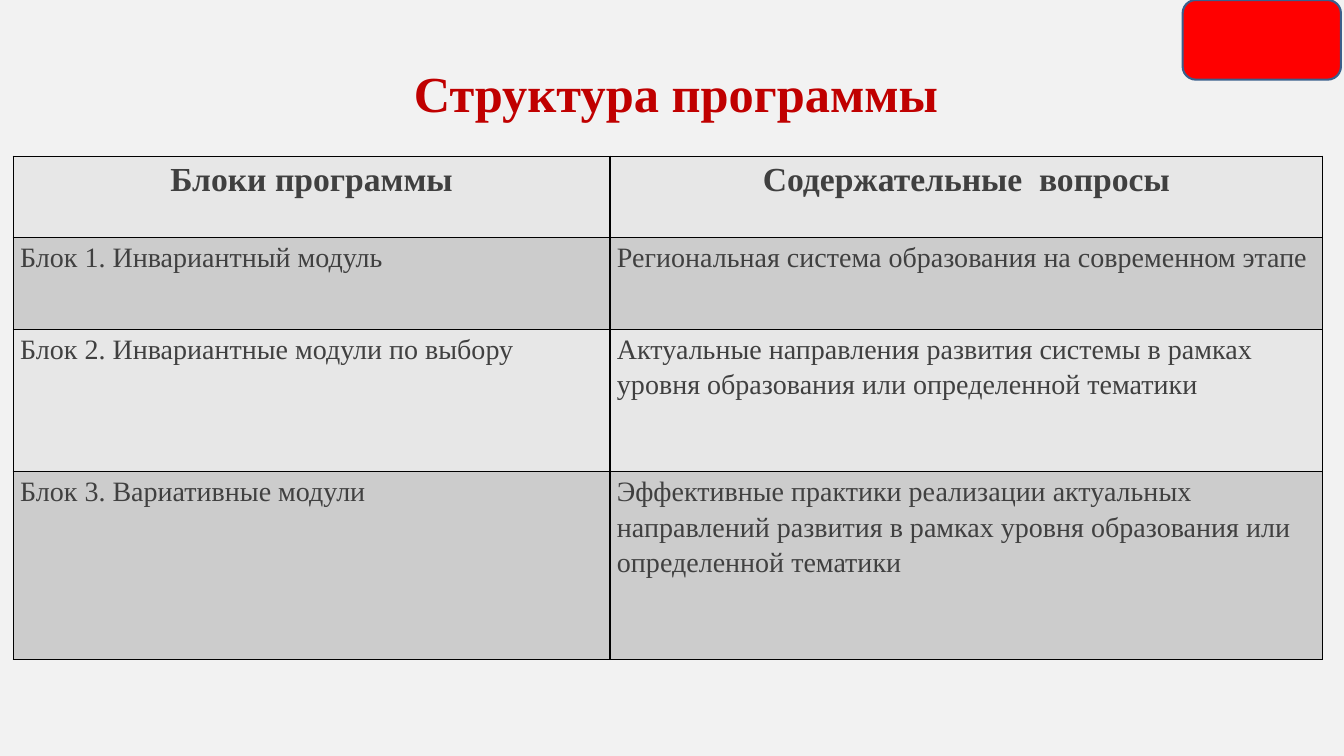
from dataclasses import dataclass

from lxml.etree import SubElement
from pptx import Presentation
from pptx.dml.color import RGBColor
from pptx.enum.shapes import MSO_SHAPE
from pptx.enum.text import MSO_ANCHOR, MSO_AUTO_SIZE, PP_ALIGN
from pptx.oxml.ns import qn
from pptx.slide import Slide
from pptx.table import _Cell
from pptx.text.text import _Paragraph
from pptx.util import Inches, Pt

FONT = "Times New Roman"
COLORS = {
    "background": "F2F2F2",
    "title": "C00000",
    "text": "404040",
    "border": "000000",
    "light_row": "E7E7E7",
    "dark_row": "CCCCCC",
    "badge": "FF0000",
    "badge_line": "3A5F8C",
}
COLUMN_WIDTHS = (5.92, 7.07)


@dataclass(frozen=True)
class ProgramRow:
    block: str
    questions: str
    height: float
    is_header: bool = False


ROWS = [
    ProgramRow("Блоки программы", "Содержательные  вопросы", 0.81, True),
    ProgramRow("Блок 1. Инвариантный модуль",
               "Региональная система образования на современном этапе", 0.91),
    ProgramRow("Блок 2. Инвариантные модули по выбору",
               "Актуальные направления развития системы в рамках "
               "уровня образования или определенной тематики", 1.41),
    ProgramRow("Блок 3. Вариативные модули",
               "Эффективные практики реализации актуальных направлений развития "
               "в рамках уровня образования или определенной тематики", 1.86),
]


def color(name: str) -> RGBColor:
    return RGBColor.from_string(COLORS[name])


def format_paragraph(paragraph: _Paragraph, size: float, bold: bool,
                     color_name: str, alignment: PP_ALIGN) -> None:
    paragraph.alignment = alignment
    paragraph.font.name = FONT
    paragraph.font.size = Pt(size)
    paragraph.font.bold = bold
    paragraph.font.color.rgb = color(color_name)


def add_borders(cell: _Cell) -> None:
    properties = cell._tc.get_or_add_tcPr()
    for side in ("a:lnL", "a:lnR", "a:lnT", "a:lnB"):
        line = SubElement(properties, qn(side), w=str(Pt(1)))
        fill = SubElement(line, qn("a:solidFill"))
        SubElement(fill, qn("a:srgbClr"), val=COLORS["border"])


def fill_cell(cell: _Cell, text: str, is_header: bool, fill_name: str) -> None:
    add_borders(cell)
    cell.fill.solid()
    cell.fill.fore_color.rgb = color(fill_name)
    cell.margin_left = cell.margin_right = Inches(0.07)
    cell.margin_top = cell.margin_bottom = 0
    cell.text = text
    paragraph = cell.text_frame.paragraphs[0]
    paragraph.line_spacing = 1.15
    paragraph.space_after = Pt(10)
    format_paragraph(paragraph, 24 if is_header else 20, is_header, "text",
                     PP_ALIGN.CENTER if is_header else PP_ALIGN.LEFT)


def add_title(slide: Slide, text: str) -> None:
    title = slide.shapes.title
    title.left, title.top = Inches(1.86), Inches(0.36)
    title.width, title.height = Inches(9.69), Inches(0.55)
    frame = title.text_frame
    frame.text = text
    frame.auto_size = MSO_AUTO_SIZE.NONE
    frame.vertical_anchor = MSO_ANCHOR.TOP
    frame.margin_top, frame.margin_bottom = Inches(0.26), 0
    format_paragraph(frame.paragraphs[0], 36, True, "title", PP_ALIGN.CENTER)


def add_program_table(slide: Slide) -> None:
    table = slide.shapes.add_table(
        len(ROWS), len(COLUMN_WIDTHS), Inches(0.13), Inches(1.55),
        Inches(sum(COLUMN_WIDTHS)), Inches(sum(row.height for row in ROWS))).table
    for column, width in zip(table.columns, COLUMN_WIDTHS):
        column.width = Inches(width)
    for index, row in enumerate(ROWS):
        table.rows[index].height = Inches(row.height)
        fill_name = "dark_row" if index % 2 else "light_row"
        for cell, text in zip(table.rows[index].cells, (row.block, row.questions)):
            fill_cell(cell, text, row.is_header, fill_name)


def add_badge(slide: Slide) -> None:
    badge = slide.shapes.add_shape(MSO_SHAPE.ROUNDED_RECTANGLE, Inches(11.73), 0,
                                   Inches(1.57), Inches(0.79))
    badge.shadow.inherit = False
    badge.fill.solid()
    badge.fill.fore_color.rgb = color("badge")
    badge.line.color.rgb = color("badge_line")
    badge.line.width = Pt(1.5)


def main() -> None:
    presentation = Presentation()
    presentation.slide_width = Inches(13.33)
    presentation.slide_height = Inches(7.5)
    slide = presentation.slides.add_slide(presentation.slide_layouts[5])

    # Background
    slide.background.fill.solid()
    slide.background.fill.fore_color.rgb = color("background")

    # Title, table and corner badge
    add_title(slide, "Структура программы")
    add_program_table(slide)
    add_badge(slide)

    presentation.save("out.pptx")


if __name__ == "__main__":
    main()
